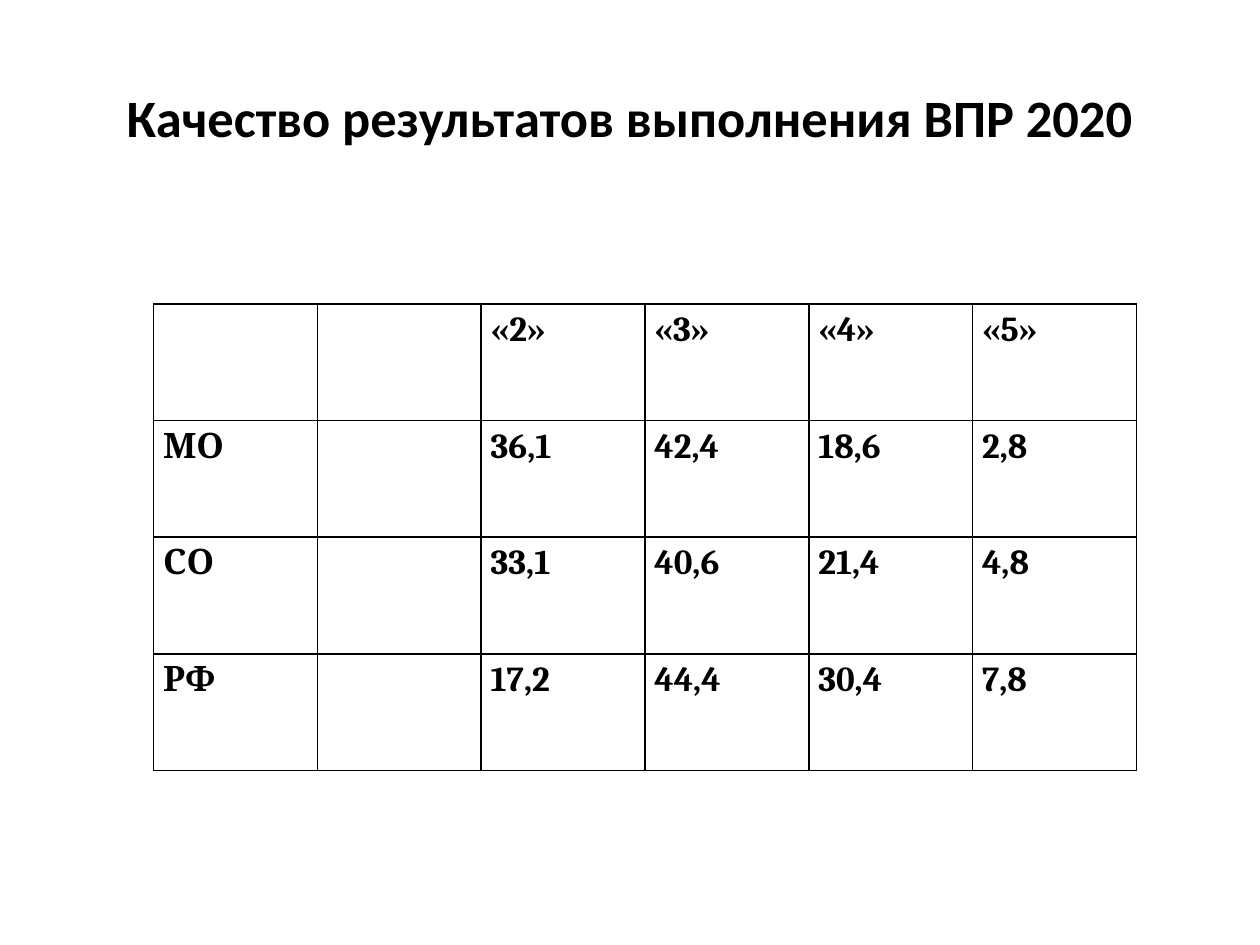
from lxml import etree
from pptx import Presentation, util as u
from pptx.dml import color
from pptx.enum import text
from pptx.oxml import ns

COLORS = {"ink": "000000", "paper": "FFFFFF"}


def write(frame, content, size=20, font="Cambria", align=text.PP_ALIGN.JUSTIFY, spacing=1.15):
    paragraph = frame.paragraphs[0]
    paragraph.alignment = align
    paragraph.line_spacing = spacing
    run = paragraph.add_run()
    run.text = content
    run.font.size = u.Pt(size)
    run.font.name = font
    run.font.bold = True
    run.font.color.rgb = color.RGBColor.from_string(COLORS["ink"])


presentation = Presentation()
presentation.slide_width = u.Pt(720)
presentation.slide_height = u.Pt(540)
slide = presentation.slides.add_slide(presentation.slide_layouts[6])

# Title
title = slide.shapes.add_textbox(u.Pt(36), u.Pt(21.6), u.Pt(648), u.Pt(90))
title.text_frame.word_wrap = True
title.text_frame.vertical_anchor = text.MSO_ANCHOR.MIDDLE
write(title.text_frame, "Качество результатов выполнения ВПР 2020",
      size=30, font="Calibri", align=text.PP_ALIGN.CENTER, spacing=1)

# Share of each mark, in percent, by region
results = [
    ["", "", "«2»", "«3»", "«4»", "«5»"],
    ["МО", "", "36,1", "42,4", "18,6", "2,8"],
    ["СО", "", "33,1", "40,6", "21,4", "4,8"],
    ["РФ", "", "17,2", "44,4", "30,4", "7,8"],
]
column_width, row_height = 93.6, 66.7
table = slide.shapes.add_table(
    len(results), len(results[0]), u.Pt(87.8), u.Pt(173.6),
    u.Pt(column_width * len(results[0])), u.Pt(row_height * len(results))).table
table.first_row = table.horz_banding = False
for column in table.columns:
    column.width = u.Pt(column_width)

for row, values in zip(table.rows, results):
    row.height = u.Pt(row_height)
    for cell, value in zip(row.cells, values):
        cell.margin_left = cell.margin_right = u.Pt(5.4)
        cell.margin_top = cell.margin_bottom = 0
        # Borders come before the fill in the cell properties
        properties = cell._tc.get_or_add_tcPr()
        for side in ("lnL", "lnR", "lnT", "lnB"):
            line = etree.SubElement(properties, ns.qn(f"a:{side}"), w=str(u.Pt(1)))
            fill = etree.SubElement(line, ns.qn("a:solidFill"))
            etree.SubElement(fill, ns.qn("a:srgbClr"), val=COLORS["ink"])
        cell.fill.solid()
        cell.fill.fore_color.rgb = color.RGBColor.from_string(COLORS["paper"])
        if value:
            write(cell.text_frame, value)

presentation.save("out.pptx")
